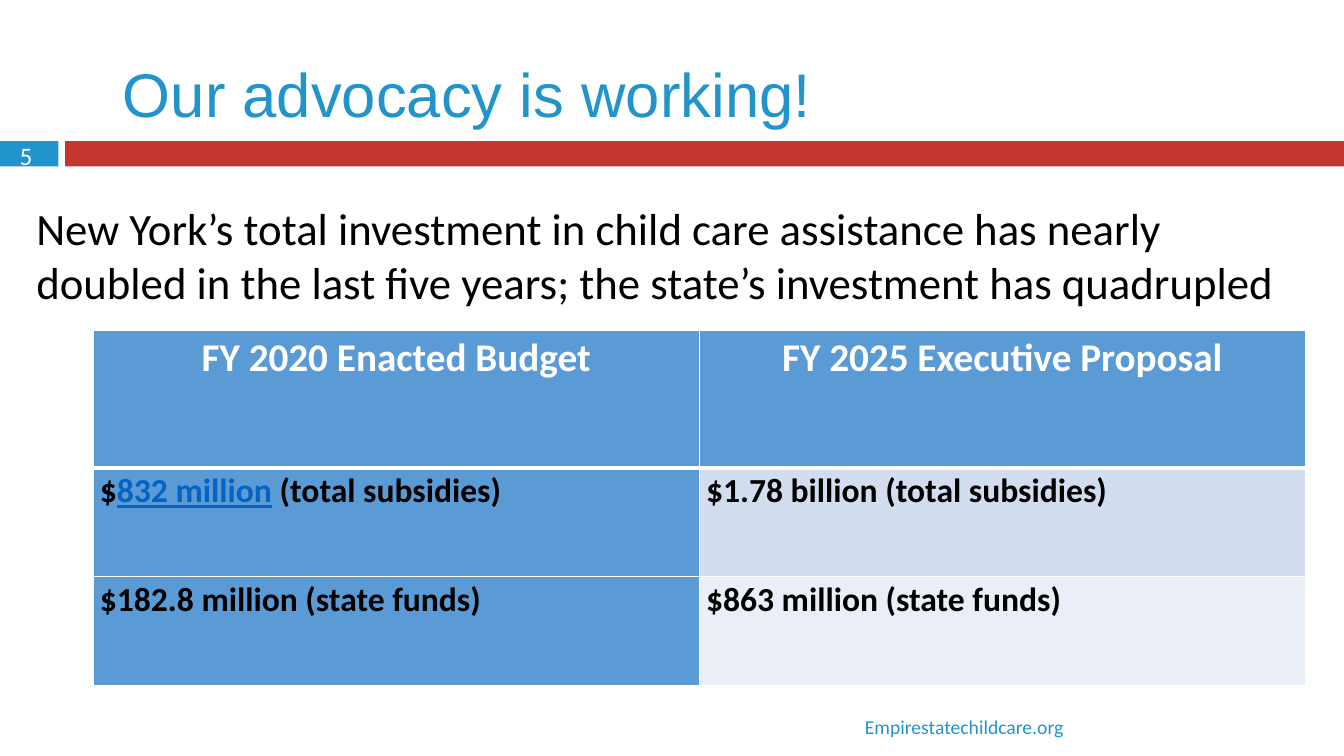
"""Builds the slide on the growth of child care funding."""
from lxml import etree
from pptx import Presentation
from pptx.dml.color import RGBColor
from pptx.enum import shapes, text
from pptx.oxml.ns import qn
from pptx.util import Pt

TITLE = "Our advocacy is working!"
MESSAGE = ("New York’s total investment in child care assistance has nearly doubled "
           "in the last five years; the state’s investment has quadrupled")
PAGE = "5"
SITE = "Empirestatechildcare.org"
BUDGETS = [
    [["FY 2020 Enacted Budget"], ["FY 2025 Executive Proposal"]],
    [["$", "832 million", " (total subsidies)"], ["$1.78 billion (total subsidies)"]],
    [["$182.8 million (state funds)"], ["$863 million (state funds)"]],
]
CITED = "832 million"

THEME = {
    "blue": "2195CB", "red": "C43730", "white": "FFFFFF", "black": "000000",
    "cited": "0563C1", "header": "5B9BD5", "bands": ["D2DEEF", "EAEFF7"],
    "title": 44, "message": 32, "heading": 28, "figure": 24, "page": 18, "site": 14,
    "display": "Arial", "body": "Calibri",
}

SLIDE_W, SLIDE_H = 960, 540
BAR_TOP, BAR_H = 100.8, 18
PAGE_W, BAR_LEFT = 41.8, 46.5
TABLE = (66.4, 236.3, 866, 253.5)
ROW_HEIGHTS = [98, 77.75, 77.75]


def rgb(value):
    return RGBColor.from_string(value)


def set_all(target, values):
    for name, value in values.items():
        setattr(target, name, value)


def add_run(paragraph, words, size, color, family=THEME["body"], **extra):
    run = paragraph.add_run()
    run.text = words
    set_all(run.font, {"size": Pt(size), "name": family, **extra})
    run.font.color.rgb = rgb(color)


def set_frame(frame, left=0, top=0, right=0, bottom=0, **extra):
    set_all(frame, {"margin_left": Pt(left), "margin_top": Pt(top),
                    "margin_right": Pt(right), "margin_bottom": Pt(bottom),
                    "word_wrap": True, **extra})


def add_words(slide, box, words, size, color, insets=(0, 0, 0, 0), align=text.PP_ALIGN.LEFT):
    frame = slide.shapes.add_textbox(*map(Pt, box)).text_frame
    set_frame(frame, *insets)
    paragraph = frame.paragraphs[0]
    paragraph.alignment = align
    add_run(paragraph, words, size, color)


def add_bar(slide, left, width, color):
    bar = slide.shapes.add_shape(shapes.MSO_SHAPE.RECTANGLE,
                                 Pt(left), Pt(BAR_TOP), Pt(width), Pt(BAR_H))
    bar.shadow.inherit = False
    bar.fill.solid()
    bar.fill.fore_color.rgb = rgb(color)
    bar.line.fill.background()


def set_borders(cell, top, bottom):
    properties = cell._tc.get_or_add_tcPr()
    widths = {"a:lnL": 1, "a:lnR": 1, "a:lnT": top, "a:lnB": bottom}
    for place, (tag, width) in enumerate(widths.items()):
        line = etree.Element(qn(tag), w=str(Pt(width)))
        fill = etree.SubElement(line, qn("a:solidFill"))
        etree.SubElement(fill, qn("a:srgbClr"), val=THEME["white"])
        properties.insert(place, line)


def fill_cell(cell, row, column, parts):
    heading = row == 0
    set_all(cell, {"margin_left": Pt(5), "margin_right": Pt(5),
                   "margin_top": 0, "margin_bottom": 0})
    cell.fill.solid()
    cell.fill.fore_color.rgb = rgb(
        THEME["header"] if heading or column == 0 else THEME["bands"][row - 1])
    set_borders(cell, top=3 if row == 1 else 1, bottom=3 if heading else 1)
    paragraph = cell.text_frame.paragraphs[0]
    set_all(paragraph, {
        "line_spacing": 1.07,
        "alignment": text.PP_ALIGN.CENTER if heading else text.PP_ALIGN.LEFT})
    size = THEME["heading" if heading else "figure"]
    for part in parts:
        cited = part == CITED
        color = THEME["white" if heading else "cited" if cited else "black"]
        add_run(paragraph, part, size, color, bold=True, underline=cited)


def add_budgets(slide):
    table = slide.shapes.add_table(len(BUDGETS), len(BUDGETS[0]), *map(Pt, TABLE)).table
    for row, height in enumerate(ROW_HEIGHTS):
        table.rows[row].height = Pt(height)
        for column, parts in enumerate(BUDGETS[row]):
            fill_cell(table.cell(row, column), row, column, parts)


def add_title(slide):
    title = slide.shapes.title
    set_all(title, {"left": Pt(80.6), "top": Pt(49.7), "width": Pt(785.5), "height": Pt(39.6)})
    set_frame(title.text_frame, left=7.2, right=7.2,
              vertical_anchor=text.MSO_ANCHOR.MIDDLE, auto_size=text.MSO_AUTO_SIZE.NONE)
    paragraph = title.text_frame.paragraphs[0]
    set_all(paragraph, {"line_spacing": 0.9, "alignment": text.PP_ALIGN.LEFT})
    add_run(paragraph, TITLE, THEME["title"], THEME["blue"], THEME["display"])


def main():
    deck = Presentation()
    set_all(deck, {"slide_width": Pt(SLIDE_W), "slide_height": Pt(SLIDE_H)})
    slide = deck.slides.add_slide(deck.slide_layouts[5])
    add_bar(slide, 0, PAGE_W, THEME["blue"])
    add_bar(slide, BAR_LEFT, SLIDE_W - BAR_LEFT, THEME["red"])
    add_words(slide, (2.9, 96.5, 36, 28.8), PAGE, THEME["page"], THEME["white"],
              insets=(11.2, 3.6, 7.2, 3.6))
    add_words(slide, (606.2, 506.9, 160.6, 24.5), SITE, THEME["site"], THEME["blue"],
              insets=(7.2, 3.6, 7.2, 3.6), align=text.PP_ALIGN.RIGHT)
    add_title(slide)
    add_words(slide, (25.9, 143.3, 891.4, 346.3), MESSAGE, THEME["message"], THEME["black"])
    add_budgets(slide)
    deck.save("out.pptx")


if __name__ == "__main__":
    main()
